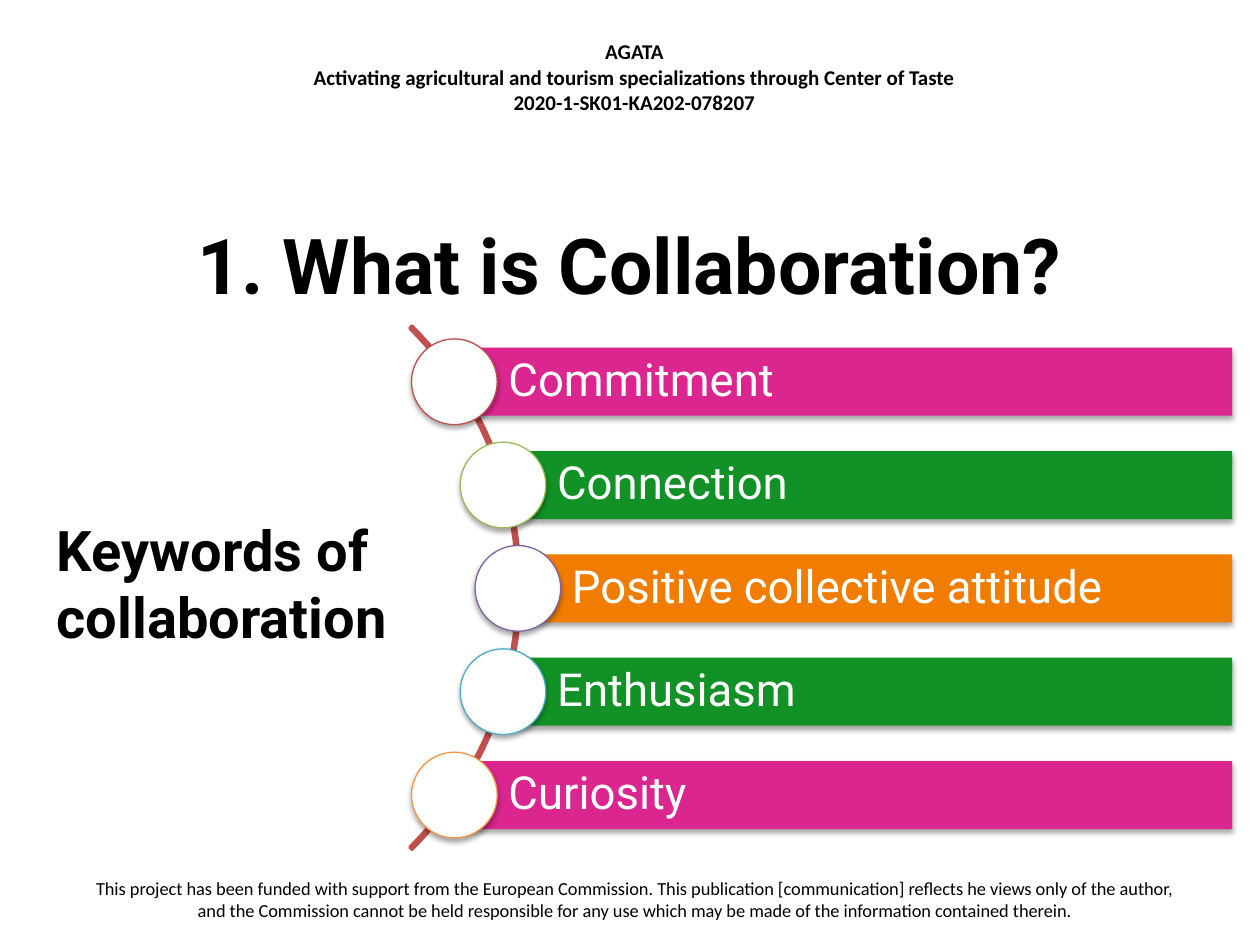
import math
from dataclasses import dataclass

from lxml import etree
from pptx import Presentation
from pptx.dml.color import RGBColor
from pptx.enum import shapes, text
from pptx.oxml import ns
from pptx.util import Inches, Pt


@dataclass(frozen=True)
class Theme:
    heading_font: str = "Roboto"
    small_font: str = "Calibri"
    title_size: float = 44
    subtitle_size: float = 32
    keyword_size: float = 26
    header_size: float = 12
    footer_size: float = 10.5
    black: str = "000000"
    white: str = "FFFFFF"
    red: str = "C0504D"
    pink: str = "DB2690"
    green: str = "129126"
    orange: str = "F07D00"
    rings: tuple = ("C0504D", "9BBB59", "8064A2", "4BACC6", "F79646")


class SlideBuilder:
    def __init__(self, slide, theme):
        self.slide = slide
        self.theme = theme

    def set_text(self, frame, lines, size, font, color, bold=False,
                 align=text.PP_ALIGN.LEFT, anchor=text.MSO_ANCHOR.TOP):
        frame.word_wrap = True
        frame.vertical_anchor = anchor
        frame.text = "\n".join(lines)
        for paragraph in frame.paragraphs:
            paragraph.alignment = align
            for run in paragraph.runs:
                run.font.size = Pt(size)
                run.font.name = font
                run.font.bold = bold
                run.font.color.rgb = RGBColor.from_string(color)

    def textbox(self, box, lines, size, font, **style):
        area = self.slide.shapes.add_textbox(*map(Inches, box))
        self.set_text(area.text_frame, lines, size, font, self.theme.black, **style)

    def shape(self, kind, box, fill=None, line=None, width=0.75):
        item = self.slide.shapes.add_shape(kind, *map(Inches, box))
        item.shadow.inherit = False
        if fill:
            item.fill.solid()
            item.fill.fore_color.rgb = RGBColor.from_string(fill)
        else:
            item.fill.background()
        if line:
            item.line.color.rgb = RGBColor.from_string(line)
            item.line.width = Pt(width)
        else:
            item.line.fill.background()
        return item

    def cast_shadow(self, item):
        effects = item._element.spPr.find(ns.qn("a:effectLst"))
        shadow = etree.SubElement(
            effects, ns.qn("a:outerShdw"), blurRad=str(Pt(3.1)),
            dist=str(Pt(1.8)), dir="5400000", rotWithShape="0")
        color = etree.SubElement(shadow, ns.qn("a:srgbClr"), val=self.theme.black)
        etree.SubElement(color, ns.qn("a:alpha"), val="35000")

    def arc(self, box):
        curve = self.shape(shapes.MSO_SHAPE.BLOCK_ARC, box, line=self.theme.red, width=2)
        # Start and end angles (315 and 45 degrees), then relative thickness
        for index, value in enumerate((189, 27, 0.004)):
            curve.adjustments[index] = value

    def keyword(self, word, x, y, right, fill, ring):
        height, diameter = 0.54, 0.68
        bar = self.shape(shapes.MSO_SHAPE.RECTANGLE,
                         (x, y - height / 2, right - x, height), fill)
        self.cast_shadow(bar)
        frame = bar.text_frame
        frame.margin_left = Inches(0.43)
        frame.margin_right = frame.margin_top = frame.margin_bottom = Inches(0.07)
        self.set_text(frame, [word], self.theme.keyword_size, self.theme.heading_font,
                      self.theme.white, anchor=text.MSO_ANCHOR.MIDDLE)
        frame.paragraphs[0].line_spacing = 0.9
        knob = self.shape(shapes.MSO_SHAPE.OVAL,
                          (x - diameter / 2, y - diameter / 2, diameter, diameter),
                          self.theme.white, ring)
        self.cast_shadow(knob)


def main():
    deck = Presentation()
    deck.slide_width, deck.slide_height = Inches(10), Inches(7.5)
    theme = Theme()
    page = SlideBuilder(deck.slides.add_slide(deck.slide_layouts[6]), theme)
    center = text.PP_ALIGN.CENTER

    # Project header and funding note
    page.textbox((2.08, 0.26, 5.91, 0.71), [
        "AGATA",
        "Activating agricultural and tourism specializations through Center of Taste",
        "2020-1-SK01-KA202-078207",
    ], theme.header_size, theme.small_font, bold=True, align=center)
    page.textbox((0.54, 6.91, 9, 0.47), [
        "This project has been funded with support from the European Commission. "
        "This publication [communication] reflects he views only of the author, "
        "and the Commission cannot be held responsible for any use which may be "
        "made of the information contained therein.",
    ], theme.footer_size, theme.small_font, align=center)

    # Title and subtitle
    page.textbox((0.5, 1.47, 9, 1.25), ["1. What is Collaboration?"],
                 theme.title_size, theme.heading_font, bold=True, align=center,
                 anchor=text.MSO_ANCHOR.MIDDLE)
    page.textbox((0.35, 4.04, 3.95, 1.25), ["Keywords of collaboration"],
                 theme.subtitle_size, theme.heading_font, bold=True)

    # Keywords strung along the arc
    page.arc((-1.74, 1.73, 5.87, 5.87))
    center_x, center_y, radius, step, right = 1.19, 4.67, 2.92, 0.82, 9.78
    keywords = (
        ("Commitment", theme.pink),
        ("Connection", theme.green),
        ("Positive collective attitude", theme.orange),
        ("Enthusiasm", theme.green),
        ("Curiosity", theme.pink),
    )
    for index, ((word, fill), ring) in enumerate(zip(keywords, theme.rings)):
        offset = (index - len(keywords) // 2) * step
        x = center_x + math.sqrt(radius ** 2 - offset ** 2)
        page.keyword(word, x, center_y + offset, right, fill, ring)

    deck.save("out.pptx")


if __name__ == "__main__":
    main()
